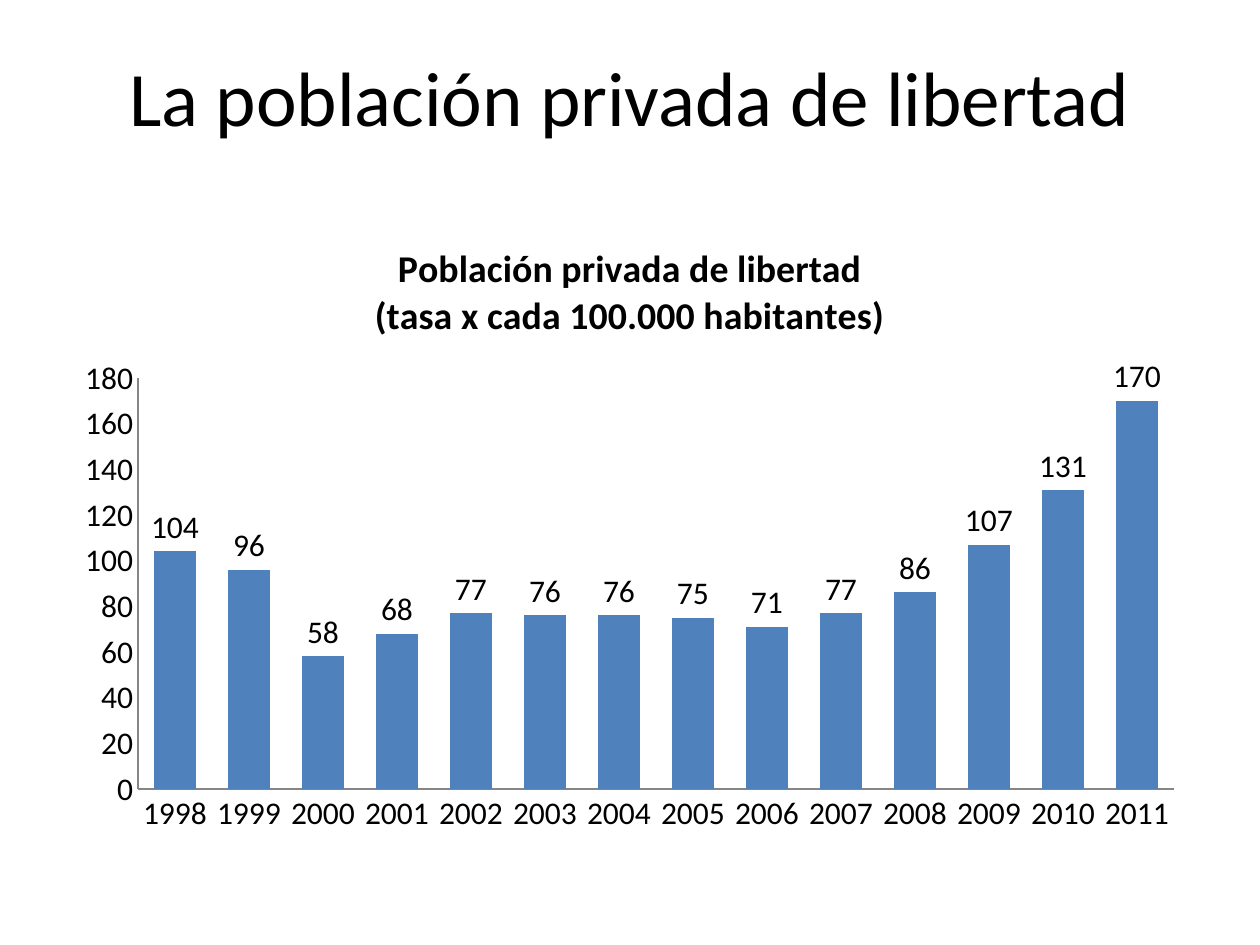
"""Build the slide on the prison population rate."""
from lxml.etree import SubElement
from pptx import Presentation
from pptx.chart.data import CategoryChartData as Data
from pptx.dml.color import RGBColor as RGB
from pptx.enum.chart import XL_CHART_TYPE as Kind, XL_LABEL_POSITION as Spot, XL_TICK_MARK as Tick
from pptx.enum.text import MSO_ANCHOR as Anchor, PP_ALIGN as Align
from pptx.oxml.ns import qn
from pptx.util import Pt

HEAD = "La población privada de libertad"
TITLE = ["Población privada de libertad", "(tasa x cada 100.000 habitantes)"]
FIRST = 1998
RATES = [104, 96, 58, 68, 77, 76, 76, 75, 71, 77, 86, 107, 131, 170]
COLORS = {"text": "000000", "bar": "4F81BD", "axis": "868686"}
FONT = "Calibri"
HEAD_BOX = (63, 38, 1134, 157)
CHART_BOX = (63, 220, 1134, 624)
PLOT = (138, 378, 1036, 411)


def px(n):
    return int(n * 914400 / 126)


def style(font, size, bold=False):
    font.name, font.size, font.bold = FONT, Pt(size), bold
    font.color.rgb = RGB.from_string(COLORS["text"])


def write(frame, lines, size, bold=False, align=Align.CENTER):
    for i, line in enumerate(lines):
        para = frame.add_paragraph() if i else frame.paragraphs[0]
        para.alignment = align
        run = para.add_run()
        run.text = line
        style(run.font, size, bold)


def place(chart):
    area = chart._chartSpace.chart.plotArea
    old = area.find(qn("c:layout"))
    if old is not None:
        area.remove(old)
    layout = area.makeelement(qn("c:layout"))
    area.insert(0, layout)
    manual = SubElement(layout, qn("c:manualLayout"))
    left, top, wide, high = CHART_BOX
    x, y, w, h = PLOT
    rules = {"layoutTarget": "inner", "xMode": "edge", "yMode": "edge",
             "x": (x - left) / wide, "y": (y - top) / high,
             "w": w / wide, "h": h / high}
    for tag, val in rules.items():
        SubElement(manual, qn("c:" + tag)).set("val", str(val))


def draw(slide):
    data = Data(number_format="0")
    data.categories = [str(FIRST + i) for i in range(len(RATES))]
    data.add_series("Series 1", RATES)
    box = map(px, CHART_BOX)
    chart = slide.shapes.add_chart(Kind.COLUMN_CLUSTERED, *box, data).chart
    style(chart.font, 18)
    chart.has_legend = False
    chart.has_title = True
    write(chart.chart_title.text_frame, TITLE, 21.6, bold=True)
    chart.chart_title.include_in_layout = False

    for axis in (chart.category_axis, chart.value_axis):
        axis.major_tick_mark = axis.minor_tick_mark = Tick.NONE
        axis.has_major_gridlines = False
        axis.format.line.color.rgb = RGB.from_string(COLORS["axis"])
        axis.format.line.width = Pt(0.75)
    scale = chart.value_axis
    scale.minimum_scale, scale.maximum_scale, scale.major_unit = 0, 180, 20

    plot = chart.plots[0]
    plot.gap_width = 75
    plot.vary_by_categories = False
    fill = plot.series[0].format.fill
    fill.solid()
    fill.fore_color.rgb = RGB.from_string(COLORS["bar"])
    plot.has_data_labels = True
    labels = plot.data_labels
    labels.show_value = True
    labels.number_format, labels.number_format_is_linked = "0", False
    labels.position = Spot.OUTSIDE_END
    style(labels.font, 18)
    place(chart)


def main():
    deck = Presentation()
    deck.slide_width, deck.slide_height = px(1260), px(945)
    slide = deck.slides.add_slide(deck.slide_layouts[6])
    frame = slide.shapes.add_textbox(*map(px, HEAD_BOX)).text_frame
    frame.word_wrap = True
    frame.vertical_anchor = Anchor.TOP
    frame.margin_top = px(11)
    write(frame, [HEAD], 44)
    draw(slide)
    deck.save("out.pptx")


if __name__ == "__main__":
    main()
